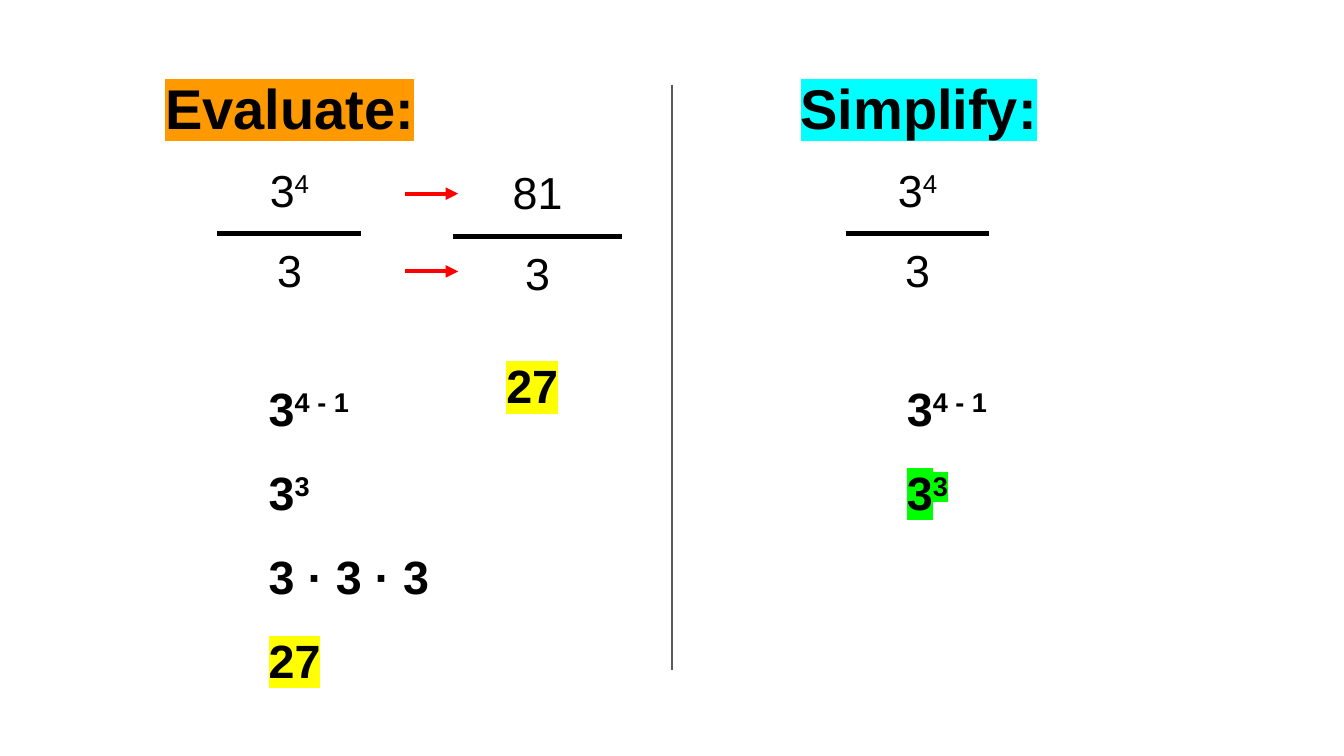
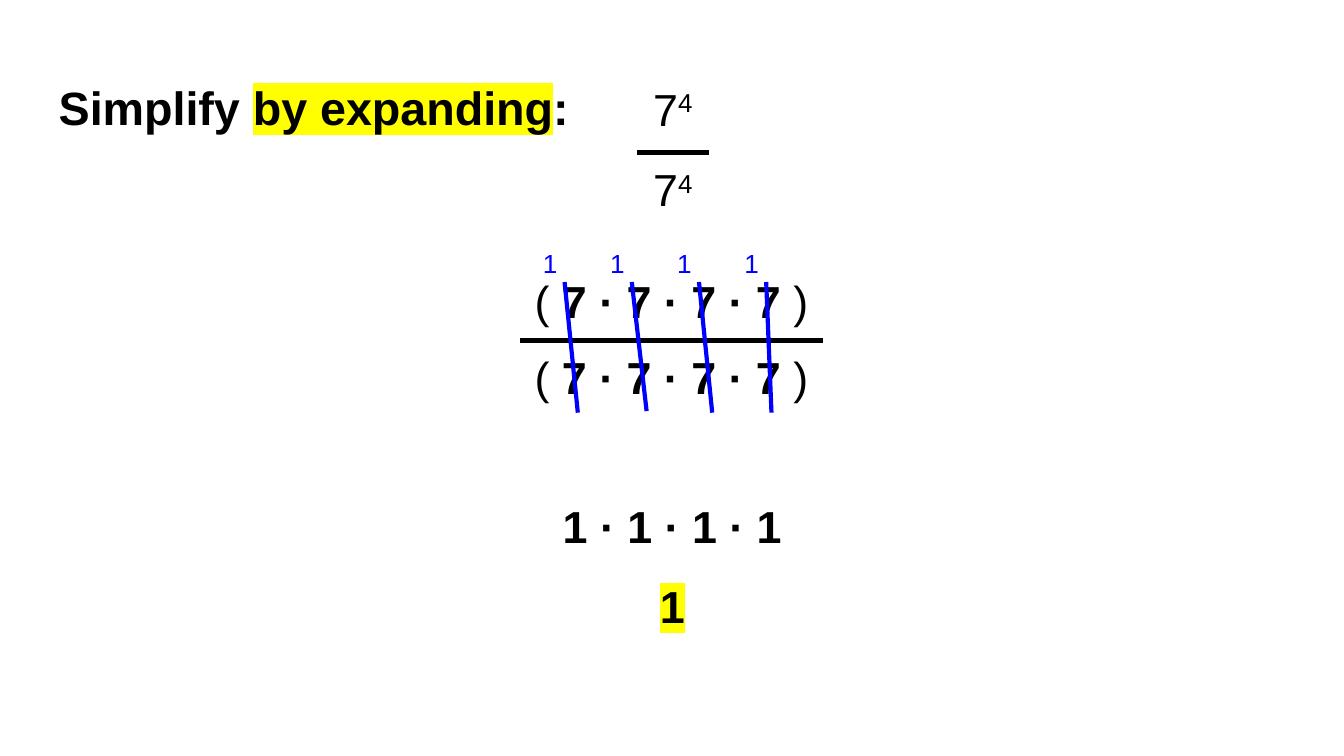
import pptx
import pptx.dml.color
import pptx.enum.shapes
import pptx.enum.text
import pptx.oxml
import pptx.oxml.ns
import pptx.util
from pptx.util import Cm

HUES = {
    "ink": "000000",
    "gray": "595959",
    "red": "FF0000",
    "blue": "0000FF",
    "orange": "FF9900",
    "cyan": "00FFFF",
    "yellow": "FFFF00",
    "green": "00FF00",
}
CENTER = pptx.enum.text.PP_ALIGN.CENTER
LEFT = pptx.enum.text.PP_ALIGN.LEFT


def node(tag, inner="", attrs=""):
    space = pptx.oxml.ns.nsdecls("a")
    return pptx.oxml.parse_xml(f"<a:{tag} {space} {attrs}>{inner}</a:{tag}>")


def power(base, top, mark=None):
    return [(base, {"mark": mark}), (top, {"mark": mark, "sup": True})]


class Deck:
    font = "Arial"
    pad = Cm(0.25)
    rows = (1.04, 1.07)

    def __init__(self):
        self.prs = pptx.Presentation()
        self.prs.slide_width = Cm(25.4)
        self.prs.slide_height = Cm(14.29)

    def slide(self):
        page = self.prs.slides.add_slide(self.prs.slide_layouts[6])
        self.page = self.pen = page.shapes

    def group(self):
        self.pen = self.page.add_group_shape().shapes

    def ungroup(self):
        self.pen = self.page

    def style(self, run, size, hue, bold=False, sup=False, mark=None):
        run.font.name = self.font
        run.font.size = pptx.util.Pt(size)
        run.font.bold = bold
        run.font.color.rgb = pptx.dml.color.RGBColor.from_string(HUES[hue])
        props = run._r.get_or_add_rPr()
        if sup:
            props.set("baseline", "30000")
        if mark:
            fill = props.find(pptx.oxml.ns.qn("a:solidFill"))
            fill.addnext(node("highlight", f'<a:srgbClr val="{HUES[mark]}"/>'))

    def fill(self, line, parts, size, hue="ink", bold=False, align=LEFT, gap=1.0):
        line.text = parts[0][0]
        for text, _ in parts[1:]:
            line.add_run().text = text
        line.alignment = align
        line.line_spacing = gap
        for run, (_, look) in zip(line.runs, parts):
            self.style(run, size, hue, **{"bold": bold, **look})

    def text(self, left, top, width, height, lines, size, **look):
        frame = self.pen.add_textbox(Cm(left), Cm(top), Cm(width), Cm(height)).text_frame
        frame.word_wrap = True
        self.inset(frame)
        for i, parts in enumerate(lines):
            line = frame.add_paragraph() if i else frame.paragraphs[0]
            self.fill(line, parts, size, **look)

    def inset(self, box):
        box.margin_left = box.margin_right = self.pad
        box.margin_top = box.margin_bottom = self.pad

    def ratio(self, left, top, width, upper, lower):
        frame = self.pen.add_table(2, 1, Cm(left), Cm(top), Cm(width), Cm(sum(self.rows)))
        table = frame.table
        table.first_row = table.horz_banding = False
        table.columns[0].width = Cm(width)
        bar = f'<a:solidFill><a:srgbClr val="{HUES["ink"]}"/></a:solidFill>'
        for i, (parts, edge) in enumerate(((upper, "lnB"), (lower, "lnT"))):
            table.rows[i].height = Cm(self.rows[i])
            cell = table.cell(i, 0)
            self.inset(cell)
            self.fill(cell.text_frame.paragraphs[0], parts, 24, align=CENTER)
            cell.fill.background()
            props = cell._tc.get_or_add_tcPr()
            for place, side in enumerate(("lnL", "lnR", "lnT", "lnB")):
                paint = bar if side == edge else "<a:noFill/>"
                props.insert(place, node(side, paint, 'w="38100"'))

    def line(self, start, end, hue, width=2.25, arrow=False):
        kind = pptx.enum.shapes.MSO_CONNECTOR.STRAIGHT
        rule = self.pen.add_connector(kind, *(Cm(n) for n in (*start, *end)))
        rule.line.color.rgb = pptx.dml.color.RGBColor.from_string(HUES[hue])
        rule.line.width = pptx.util.Pt(width)
        if arrow:
            rule.line._get_or_add_ln().append(node("tailEnd", attrs='type="triangle"'))
        rule._element.spPr.append(node("effectLst"))


def compare(deck):
    deck.slide()
    for left, word, mark in ((0.61, "Evaluate:", "orange"), (12.5, "Simplify:", "cyan")):
        title = [(word, {"mark": mark})]
        deck.text(left, 1.14, 9.73, 1.65, [title], 30, bold=True, align=CENTER)
    for left in (4.11, 15.98):
        deck.ratio(left, 2.9, 2.72, power("3", "4"), [("3", {})])

    answer = [("27", {"mark": "yellow"})]
    first = power("3", "4 - 1")
    steps = [first, power("3", "3"), [("3 · 3 · 3", {})], answer]
    short = [first, power("3", "3", "green")]
    for left, top, width, lines in (
        (4.83, 6.4, 4.01, steps),
        (9.32, 5.97, 2.24, [answer]),
        (16.89, 6.4, 2.72, short),
    ):
        deck.text(left, top, width, 1.83, lines, 25, bold=True, gap=1.5)

    deck.group()
    for y in (3.66, 5.13):
        deck.line((7.65, y), (8.66, y), "red", arrow=True)
    deck.ungroup()
    deck.ratio(8.56, 2.95, 3.2, [("81", {})], [("3", {})])
    deck.line((12.7, 1.6), (12.7, 12.67), "gray", 0.75)


def expand(deck):
    deck.slide()
    sevens = [("(", {}), (" 7 · 7 · 7 · 7 ", {"bold": True}), (")", {})]
    deck.ratio(9.83, 5.0, 5.72, sevens, sevens)
    title = [("Simplify ", {}), ("by expanding", {"mark": "yellow"}), (":", {})]
    deck.text(0.86, 1.24, 23.67, 1.6, [title], 25, bold=True)
    result = [[("1 · 1 · 1 · 1", {})], [("1", {"mark": "yellow"})]]
    deck.text(8.41, 8.66, 8.59, 1.98, result, 24, bold=True, align=CENTER, gap=1.5)
    deck.ratio(12.04, 1.37, 1.35, power("7", "4"), power("7", "4"))
    for i, (lean, end) in enumerate(((0.25, 7.8), (0.28, 7.77), (0.25, 7.8), (0.1, 7.8))):
        shift = 1.27 * i
        deck.group()
        deck.line((10.67 + shift, 5.33), (10.67 + shift + lean, end), "blue")
        deck.text(10.01 + shift, 4.42, 1.12, 1.52, [[("1", {})]], 14, hue="blue")
    deck.ungroup()


def main():
    deck = Deck()
    compare(deck)
    expand(deck)
    deck.prs.save("out.pptx")


if __name__ == "__main__":
    main()
